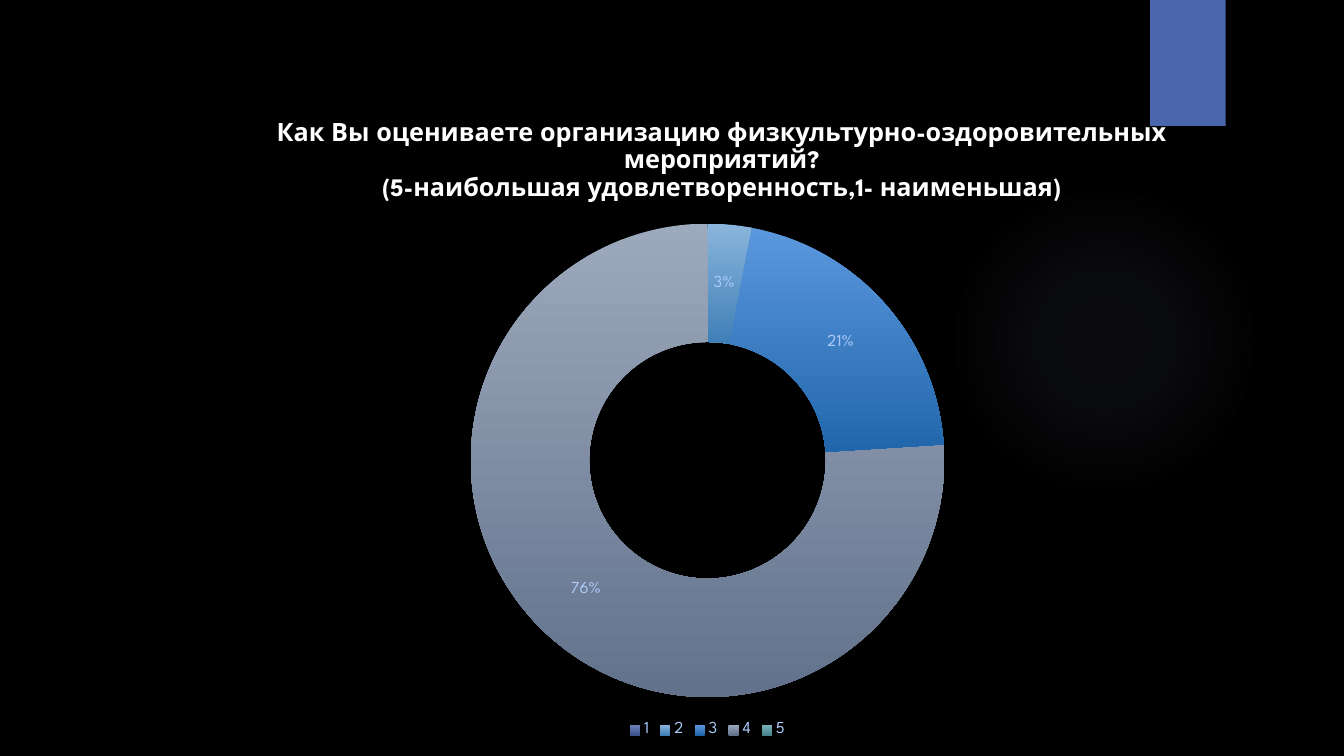
"""Build a slide with a doughnut chart of survey ratings."""
from lxml.etree import fromstring
from pptx import Presentation
from pptx.chart.data import CategoryChartData
from pptx.dml.color import RGBColor
from pptx.enum.chart import XL_CHART_TYPE, XL_LEGEND_POSITION
from pptx.enum.shapes import MSO_SHAPE
from pptx.enum.text import MSO_ANCHOR, PP_ALIGN
from pptx.util import Pt

TITLE = ("Как Вы оцениваете организацию физкультурно-оздоровительных мероприятий?\v"
         "(5-наибольшая удовлетворенность,1- наименьшая)")
RATINGS = [
    ("1", 0, RGBColor(0x6C, 0x81, 0xBA), RGBColor(0x3B, 0x52, 0x8A)),
    ("2", 3, RGBColor(0x8A, 0xB5, 0xDC), RGBColor(0x3F, 0x7F, 0xB7)),
    ("3", 21, RGBColor(0x5B, 0x97, 0xDD), RGBColor(0x21, 0x66, 0xAB)),
    ("4", 76, RGBColor(0x9D, 0xA9, 0xBC), RGBColor(0x62, 0x72, 0x8C)),
    ("5", None, RGBColor(0x7B, 0xB3, 0xBD), RGBColor(0x48, 0x82, 0x8C)),
]
GLOW = [(0, 7), (36, 6), (69, 0)]
HOLE = 69
FACE = "League Spartan"
BLACK = RGBColor(0, 0, 0)
WHITE = RGBColor(255, 255, 255)
BLUE = RGBColor(0x4A, 0x66, 0xAC)
PALE = RGBColor(0xAC, 0xCB, 0xF9)
HAZE = RGBColor(0x92, 0x97, 0xCF)
SPACE = "http://schemas.openxmlformats.org/drawingml/2006/main"


def style(font, size, color):
    font.name, font.size, font.color.rgb = FACE, Pt(size), color


def add_plain(slide, kind, *box):
    shape = slide.shapes.add_shape(kind, *map(Pt, box))
    shape.shadow.inherit = False
    shape.line.fill.background()
    return shape


def add_glow(slide):
    shape = add_plain(slide, MSO_SHAPE.OVAL, 677.5, 131.8, 221.8, 221.8)
    shape.fill.background()
    stops = "".join(
        f'<a:gs pos="{pos * 1000}"><a:srgbClr val="{HAZE}">'
        f'<a:alpha val="{alpha * 1000}"/></a:srgbClr></a:gs>'
        for pos, alpha in GLOW)
    grad = fromstring(
        f'<a:gradFill xmlns:a="{SPACE}"><a:gsLst>{stops}</a:gsLst>'
        '<a:path path="circle"><a:fillToRect l="50000" t="50000" '
        'r="50000" b="50000"/></a:path></a:gradFill>')
    props = shape._element.spPr
    props.replace(props.find(f"{{{SPACE}}}noFill"), grad)


def add_title(slide):
    frame = slide.shapes.add_textbox(*map(Pt, (116.6, 82.1, 797.8, 101.5))).text_frame
    frame.word_wrap = True
    frame.vertical_anchor = MSO_ANCHOR.TOP
    frame.margin_left = frame.margin_right = Pt(30)
    frame.text = TITLE
    para = frame.paragraphs[0]
    para.alignment = PP_ALIGN.CENTER
    para.line_spacing = 0.9
    for run in para.runs:
        style(run.font, 18, WHITE)
        run.font.bold = True


def add_ring(slide):
    data = CategoryChartData()
    data.categories = [name for name, *_ in RATINGS]
    data.add_series("Series 1", [value for _, value, *_ in RATINGS])
    chart = slide.shapes.add_chart(
        XL_CHART_TYPE.DOUGHNUT, *map(Pt, (149, 149.8, 712.8, 380.2)), data).chart
    style(chart.font, 10, WHITE)
    chart.has_title = False
    chart.has_legend = True
    chart.legend.position = XL_LEGEND_POSITION.BOTTOM
    chart.legend.include_in_layout = False
    style(chart.legend.font, 12, PALE)
    plot = chart.plots[0]
    plot.vary_by_categories = True
    plot._element.xpath("c:holeSize")[0].set("val", str(HOLE))
    series = plot.series[0]
    for i, (_, _, *shades) in enumerate(RATINGS):
        form = series.points[i].format
        form.line.fill.background()
        form.fill.gradient()
        form.fill.gradient_angle = 270
        for stop, shade in zip(form.fill.gradient_stops, shades):
            stop.color.rgb = shade
    labels = series.data_labels
    labels.show_value = False
    labels.show_percentage = True
    labels.number_format = "0%"
    labels.number_format_is_linked = False
    style(labels.font, 12, PALE)


def main():
    deck = Presentation()
    deck.slide_width, deck.slide_height = Pt(960), Pt(540)
    slide = deck.slides.add_slide(deck.slide_layouts[6])
    back = slide.background.fill
    back.solid()
    back.fore_color.rgb = BLACK
    add_glow(slide)
    flag = add_plain(slide, MSO_SHAPE.RECTANGLE, 821.5, 0, 54, 90)
    flag.fill.solid()
    flag.fill.fore_color.rgb = BLUE
    add_title(slide)
    add_ring(slide)
    deck.save("out.pptx")


if __name__ == "__main__":
    main()
